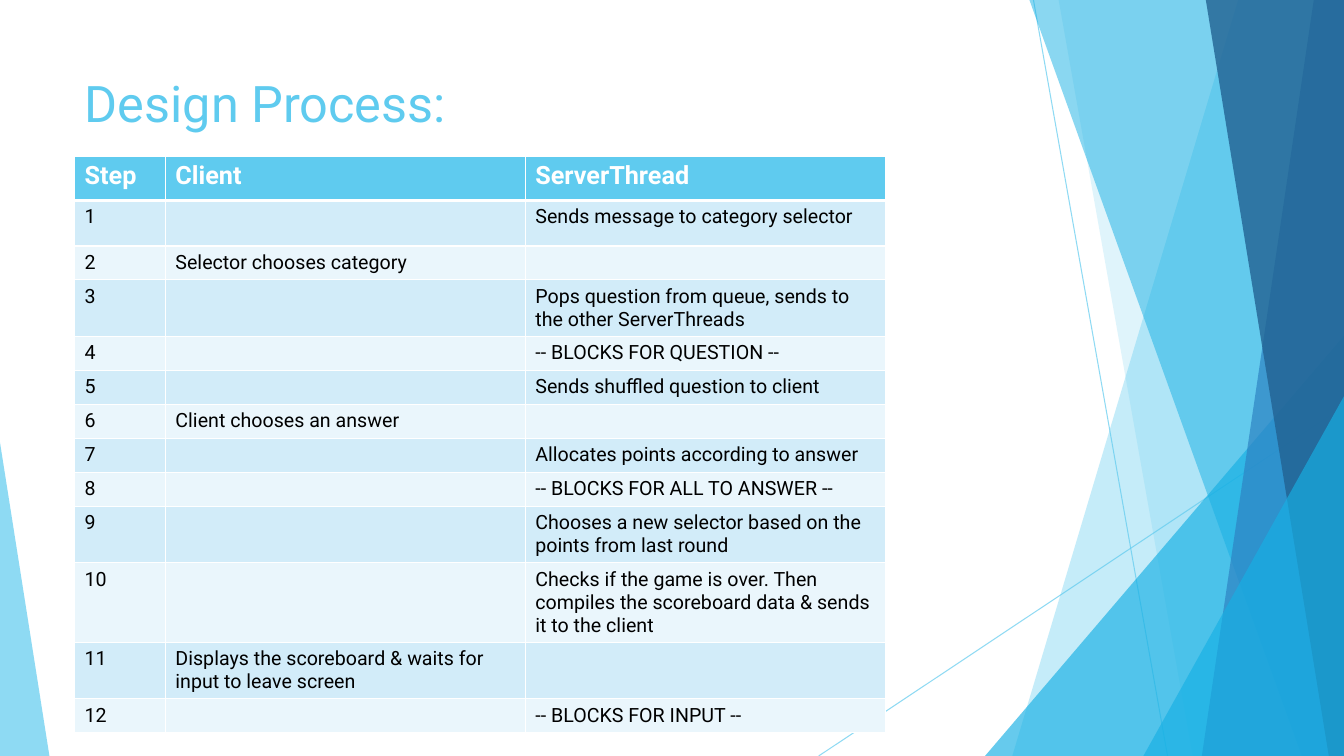
from lxml import etree
from pptx import Presentation
from pptx.dml.color import RGBColor
from pptx.enum.shapes import MSO_CONNECTOR, MSO_SHAPE
from pptx.enum.text import MSO_ANCHOR, MSO_AUTO_SIZE, PP_ALIGN
from pptx.oxml.ns import qn
from pptx.util import Inches, Pt

STRAIGHT, TRIANGLE = MSO_CONNECTOR.STRAIGHT, MSO_SHAPE.ISOSCELES_TRIANGLE
TOP, LEFT, NO_FIT = MSO_ANCHOR.TOP, PP_ALIGN.LEFT, MSO_AUTO_SIZE.NONE

FONT = "Roboto"
W, H = 13.33, 7.5
COLORS = {
    "sky": "5FCBEF", "cyan": "17B0E4", "blue": "2E83C3", "navy": "226292",
    "white": "FFFFFF", "black": "000000", "odd": "D2ECF9", "even": "EAF6FC",
}
HEADER = ("Step", "Client", "ServerThread")
# Client action, server action, lines of text
STEPS = [
    ("", "Sends message to category selector", 1),
    ("Selector chooses category", "", 1),
    ("", "Pops question from queue, sends to the other ServerThreads", 2),
    ("", "-- BLOCKS FOR QUESTION --", 1),
    ("", "Sends shuffled question to client", 1),
    ("Client chooses an answer", "", 1),
    ("", "Allocates points according to answer", 1),
    ("", "-- BLOCKS FOR ALL TO ANSWER --", 1),
    ("", "Chooses a new selector based on the points from last round", 2),
    ("", "Checks if the game is over. Then compiles the scoreboard data & sends it to the client", 3),
    ("Displays the scoreboard & waits for input to leave screen", "", 2),
    ("", "-- BLOCKS FOR INPUT --", 1),
]


def rgb(name):
    return RGBColor.from_string(COLORS[name])


def set_alpha(sp, percent):
    color = sp._element.spPr.find(".//" + qn("a:srgbClr"))
    etree.SubElement(color, qn("a:alpha"), val=str(percent * 1000))


def write(tf, text, size=14, color="black", bold=False):
    p = tf.paragraphs[0]
    p.alignment = LEFT
    if not text:
        # Keeps an empty cell as low as a line of body text
        etree.SubElement(p._p, qn("a:endParaRPr"), sz=str(size * 100))
        return
    r = p.add_run()
    r.text = text
    r.font.name, r.font.size, r.font.bold = FONT, Pt(size), bold
    r.font.color.rgb = rgb(color)


def paint(sp, color, alpha):
    sp.shadow.inherit = False
    sp.fill.solid()
    sp.fill.fore_color.rgb = rgb(color)
    sp.line.fill.background()
    set_alpha(sp, alpha)


def add_line(s, x1, y1, x2, y2):
    line = s.shapes.add_connector(STRAIGHT, *map(Inches, (x1, y1, x2, y2)))
    line.line.color.rgb = rgb("sky")
    line.line.width = Pt(0.75)
    set_alpha(line, 70)
    etree.SubElement(line._element.spPr, qn("a:effectLst"))


def add_band(s, x_top, x_bottom, color, alpha):
    """Full-height band from a slanted left edge to the right slide edge."""
    fb = s.shapes.build_freeform(Inches(x_top), 0, scale=1.0)
    corners = [(W, 0), (W, H), (x_bottom, H)]
    fb.add_line_segments([(Inches(x), Inches(y)) for x, y in corners], close=True)
    paint(fb.convert_to_shape(), color, alpha)


def add_triangle(s, x, y, w, apex, color, alpha):
    """Triangle that stands on the bottom slide edge."""
    sp = s.shapes.add_shape(TRIANGLE, *map(Inches, (x, y, w, H - y)))
    sp.adjustments[0] = apex
    paint(sp, color, alpha)


def add_decoration(s):
    add_line(s, 10.25, 0, 11.58, H)
    add_line(s, W, 4.03, 8.12, H)
    add_band(s, 12.28, 10.04, "sky", 36)
    add_band(s, 10.5, 11.83, "sky", 20)
    add_triangle(s, 9.77, 3.33, 3.56, 1, "cyan", 66)
    add_band(s, 10.21, 12.91, "cyan", 50)
    add_band(s, 13.03, 11.92, "blue", 70)
    add_band(s, 11.96, 13.18, "navy", 80)
    add_triangle(s, 11.34, 3.93, 1.99, 1, "cyan", 66)
    add_triangle(s, 0, 4.39, 0.49, 0, "sky", 70)


def add_title(s, text, x, y, w, h):
    title = s.shapes.title
    title.left, title.top, title.width, title.height = map(Inches, (x, y, w, h))
    tf = title.text_frame
    tf.word_wrap, tf.auto_size, tf.vertical_anchor = True, NO_FIT, TOP
    write(tf, text, size=36, color="sky")


def set_borders(cell, top, bottom):
    tcPr = cell._tc.get_or_add_tcPr()
    for side, width in (("L", 1), ("R", 1), ("T", top), ("B", bottom)):
        ln = etree.SubElement(tcPr, qn("a:ln" + side), w=str(Pt(width)))
        fill = etree.SubElement(ln, qn("a:solidFill"))
        etree.SubElement(fill, qn("a:srgbClr"), val=COLORS["white"])


def add_steps_table(s, x, y, w):
    rows = [HEADER] + [(str(i), client, server)
                       for i, (client, server, _) in enumerate(STEPS, 1)]
    # Cell margins plus the lines of text; the first two rows are taller
    heights = [0.44, 0.45] + [0.1 + 0.23 * lines for _, _, lines in STEPS[1:]]
    step_w = 0.9
    widths = [step_w] + [(w - step_w) / 2] * 2
    frame = s.shapes.add_table(len(rows), len(widths),
                               *map(Inches, (x, y, w, sum(heights))))
    table = frame.table
    for column, width in zip(table.columns, widths):
        column.width = Inches(width)
    for i, (values, height) in enumerate(zip(rows, heights)):
        table.rows[i].height = Inches(height)
        for cell, text in zip(table.rows[i].cells, values):
            set_borders(cell, 3 if i == 1 else 1, 3 if i == 0 else 1)
            cell.fill.solid()
            if i == 0:
                cell.fill.fore_color.rgb = rgb("sky")
                write(cell.text_frame, text, size=18, color="white", bold=True)
            else:
                cell.fill.fore_color.rgb = rgb("odd" if i % 2 else "even")
                write(cell.text_frame, text)


def main():
    prs = Presentation()
    prs.slide_width, prs.slide_height = Inches(W), Inches(H)
    s = prs.slides.add_slide(prs.slide_layouts[5])
    add_decoration(s)
    add_title(s, "Design Process:", 0.74, 0.67, 9.4, 1.44)
    add_steps_table(s, 0.74, 1.55, 8.04)
    prs.save("out.pptx")


if __name__ == "__main__":
    main()
